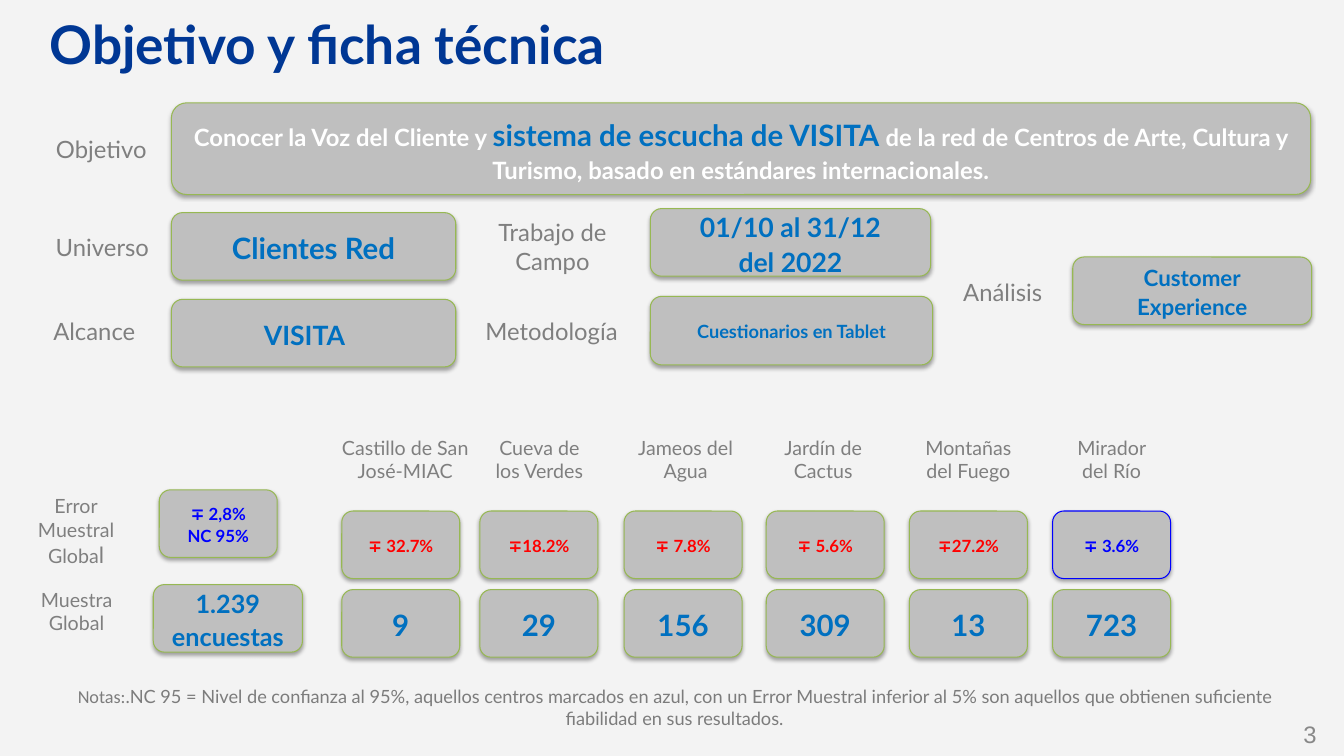
import pptx
import pptx.util
import pptx.dml.color
import pptx.enum.shapes
import pptx.enum.text
import pptx.oxml
import pptx.oxml.ns

PX = 9144
GREY, BLUE, RED, WHITE, INDIGO = "7F7F7F", "0070C0", "FF0000", "FFFFFF", "0000FF"
GREEN = "97B853"
ALIGN = pptx.enum.text.PP_ALIGN
SHADOW = (
    '<a:outerShdw %s blurRad="39370" dist="22860" dir="5400000" rotWithShape="0">'
    '<a:srgbClr val="000000"><a:alpha val="35000"/></a:srgbClr></a:outerShdw>'
    % pptx.oxml.ns.nsdecls("a")
)


def rgb(value):
    return pptx.dml.color.RGBColor.from_string(value)


def write(sp, paragraphs, size, color, bold=False, align=ALIGN.CENTER,
          spacing=None, margins=(12, 6, 12, 6), font="Lato"):
    tf = sp.text_frame
    left, top, right, bottom = [m * PX for m in margins]
    frame = {
        "word_wrap": True,
        "auto_size": pptx.enum.text.MSO_AUTO_SIZE.NONE,
        "vertical_anchor": pptx.enum.text.MSO_ANCHOR.MIDDLE,
        "margin_left": left, "margin_top": top,
        "margin_right": right, "margin_bottom": bottom,
    }
    for name, value in frame.items():
        setattr(tf, name, value)
    if isinstance(paragraphs, str):
        paragraphs = [[(line, {})] for line in paragraphs.split("\n")]
    for i, runs in enumerate(paragraphs):
        p = tf.paragraphs[0] if i == 0 else tf.add_paragraph()
        p.alignment = align
        if spacing:
            p.line_spacing = spacing
        for text, changes in runs:
            r = p.add_run()
            r.text = text
            fmt = {"name": font, "size": size, "bold": bold, "color": color, **changes}
            r.font.color.rgb = rgb(fmt.pop("color"))
            fmt["size"] = pptx.util.Pt(fmt["size"])
            for name, value in fmt.items():
                setattr(r.font, name, value)


prs = pptx.Presentation()
prs.slide_width, prs.slide_height = 1333 * PX, 750 * PX
s = prs.slides.add_slide(prs.slide_layouts[5])
s.background.fill.solid()
s.background.fill.fore_color.rgb = rgb("F3F3F3")

title = s.shapes.title
for name, value in {"left": 37, "top": 2, "width": 1252, "height": 82}.items():
    setattr(title, name, value * PX)
write(title, "Objetivo y ficha técnica", 38, "003794", True, ALIGN.LEFT)

objective = [[
    ("Conocer la Voz del Cliente y ", {}),
    ("sistema de escucha de VISITA ", {"size": 21, "color": BLUE}),
    ("de la red de Centros de Arte, Cultura y Turismo, basado en estándares internacionales.", {}),
]]
global_error = [[("Error", {})], [("Muestral Globa", {}), ("l", {"size": 16})]]
notes = [[
    ("Notas:", {"name": "Calibri"}),
    (".NC 95 = Nivel de confianza al 95%, aquellos centros marcados en azul, con un Error "
     "Muestral inferior al 5% son aquellos que obtienen suficiente fiabilidad en sus resultados.", {}),
]]

labels = [
    (31, 127, 139, 41, "Objetivo", 17),
    (32, 224, 139, 41, "Universo", 17),
    (24, 308, 139, 41, "Alcance", 17),
    (453, 210, 190, 69, "Trabajo de\nCampo", 17),
    (452, 308, 190, 41, "Metodología", 17),
    (925, 269, 139, 41, "Análisis", 17),
    (0, 484, 151, 86, global_error, 14),
    (-1, 577, 154, 59, "Muestra Global", 14),
]
boxes = [
    (170, 102, 1130, 91, objective, 17, WHITE, GREEN),
    (170, 211, 282, 67, "Clientes Red", 21, BLUE, GREEN),
    (170, 297, 264, 67, "VISITA", 19, BLUE, GREEN),
    (645, 207, 278, 67, "01/10 al 31/12\ndel 2022", 19, BLUE, GREEN),
    (645, 294, 280, 68, "Cuestionarios en Tablet", 13, BLUE, GREEN),
    (1064, 255, 237, 67, "Customer\nExperience", 16, BLUE, GREEN),
    (158, 486, 117, 67, "∓ 2,8%\nNC 95%", 12, INDIGO, GREEN),
    (152, 580, 148, 67, "1.239\nencuestas", 18, BLUE, GREEN),
]
boxes[2] = (170, 297, 282) + boxes[2][3:]

centres = [
    (339, 327, 150, "Castillo de San José-MIAC", "∓ 32.7%", "9", RED, GREEN),
    (476, 477, 116, "Cueva de los Verdes", "∓18.2%", "29", RED, GREEN),
    (619, 609, 142, "Jameos del Agua", "∓ 7.8%", "156", RED, GREEN),
    (760, 744, 145, "Jardín de Cactus", "∓ 5.6%", "309", RED, GREEN),
    (902, 902, 117, "Montañas del Fuego", "∓27.2%", "13", RED, GREEN),
    (1044, 1044, 117, "Mirador del Río", "∓ 3.6%", "723", INDIGO, INDIGO),
]
for x, label_x, label_w, centre, error, sample, color, line in centres:
    labels.append((label_x, 420, label_w, 71, centre, 14))
    boxes.append((x, 507, 117, 67, error, 12, color, line))
    boxes.append((x, 585, 117, 67, sample, 21, BLUE, GREEN))

for x, y, w, h, text, size in labels:
    sp = s.shapes.add_textbox(x * PX, y * PX, w * PX, h * PX)
    write(sp, text, size, GREY)

for x, y, w, h, text, size, color, line in boxes:
    sp = s.shapes.add_shape(pptx.enum.shapes.MSO_SHAPE.ROUNDED_RECTANGLE,
                            x * PX, y * PX, w * PX, h * PX)
    sp.fill.solid()
    sp.fill.fore_color.rgb = rgb("BFBFBF")
    sp.line.color.rgb = rgb(line)
    sp.line.width = pptx.util.Pt(0.75)
    sp.shadow.inherit = False
    effects = sp._element.spPr.find(pptx.oxml.ns.qn("a:effectLst"))
    effects.append(pptx.oxml.parse_xml(SHADOW))
    margins = (12, 6, 30, 6) if text == "VISITA" else (12, 6, 12, 6)
    write(sp, text, size, color, True, spacing=1.1, margins=margins)

sp = s.shapes.add_textbox(37 * PX, 674 * PX, 1264 * PX, 78 * PX)
write(sp, notes, 13, "7C7C7C")
sp.text_frame.vertical_anchor = pptx.enum.text.MSO_ANCHOR.TOP

sp = s.shapes.add_textbox(1073 * PX, 709 * PX, 233 * PX, 39 * PX)
write(sp, "3", 17, "888888", align=ALIGN.RIGHT, margins=(0, 0, 0, 0), font="Arial")

prs.save("out.pptx")
